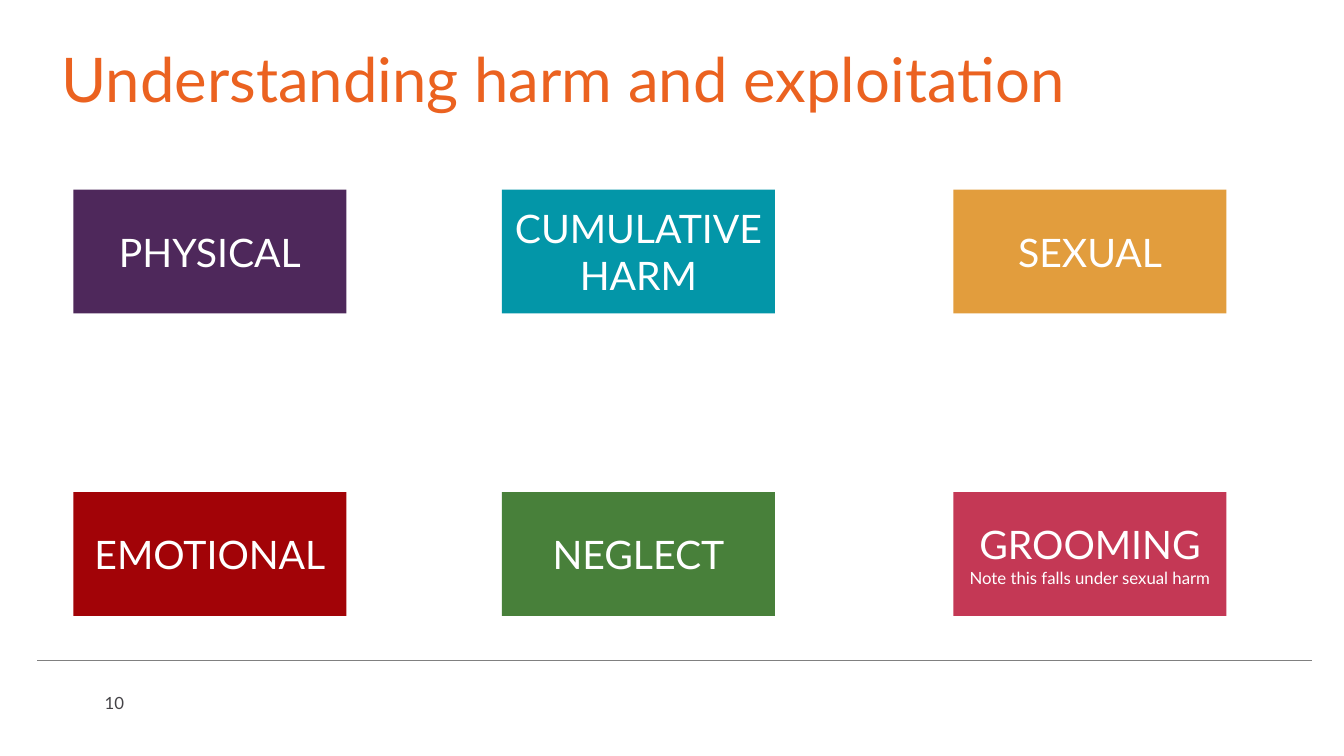
from pptx import Presentation
from pptx.dml.color import RGBColor
from pptx.enum.shapes import MSO_CONNECTOR as Connector, MSO_SHAPE as Shape
from pptx.enum.text import MSO_ANCHOR as Anchor, PP_ALIGN as Align
from pptx.oxml.ns import qn
from pptx.util import Cm, Pt

FONT = "Lato"
COLUMNS = (1.85, 12.65, 24.03)
ROWS = (4.78, 12.4)
HARMS = (
    (
        ("4E285B", [("PHYSICAL", 28)]),
        ("0396A8", [("CUMULATIVE", 28), ("HARM", 28)]),
        ("E29D3D", [("SEXUAL", 28)]),
    ),
    (
        ("A20307", [("EMOTIONAL", 28)]),
        ("48803A", [("NEGLECT", 28)]),
        ("C43855", [("GROOMING", 28), ("Note this falls under sexual harm", 12)]),
    ),
)


def color(value):
    """Turn a hex string into a colour."""
    return RGBColor.from_string(value)


def write(para, text, size, ink):
    """Fill a paragraph with text in the slide font."""
    para.text = text
    para.font.name = FONT
    para.font.size = Pt(size)
    para.font.color.rgb = color(ink)


def add_text(page, left, top, width, height, text, size, ink):
    """Add a one-paragraph text box and return its frame."""
    box = page.shapes.add_textbox(Cm(left), Cm(top), Cm(width), Cm(height))
    frame = box.text_frame
    frame.word_wrap = True
    write(frame.paragraphs[0], text, size, ink)
    return frame


def add_title(page, text):
    """Add the slide heading."""
    frame = add_text(page, 1.3, 1.12, 29.06, 2.01, text, 44, "EB6220")
    frame.vertical_anchor = Anchor.MIDDLE
    para = frame.paragraphs[0]
    para.line_spacing = Pt(43.7)
    para.space_after = Pt(14.6)


def add_harm(page, left, top, fill, lines):
    """Add a filled rectangle naming one kind of harm."""
    box = page.shapes.add_shape(Shape.RECTANGLE, Cm(left), Cm(top), Cm(6.88), Cm(3.12))
    box.shadow.inherit = False
    box.fill.solid()
    box.fill.fore_color.rgb = color(fill)
    box.line.fill.background()
    frame = box.text_frame
    frame.word_wrap = True
    frame.vertical_anchor = Anchor.MIDDLE
    for index, (text, size) in enumerate(lines):
        para = frame.add_paragraph() if index else frame.paragraphs[0]
        write(para, text, size, "FFFFFF")
        para.alignment = Align.CENTER


def add_rule(page, left, right, top):
    """Add the thin grey line above the footer."""
    rule = page.shapes.add_connector(
        Connector.STRAIGHT, Cm(left), Cm(top), Cm(right), Cm(top)
    )
    rule.line.color.rgb = color("808080")
    rule.line.width = Pt(1)
    properties = rule._element.spPr
    properties.append(properties.makeelement(qn("a:effectLst"), {}))


def main():
    """Build and save the slide."""
    deck = Presentation()
    deck.slide_width, deck.slide_height = Cm(33.87), Cm(19.05)
    page = deck.slides.add_slide(deck.slide_layouts[6])
    add_rule(page, 0.94, 33.07, 16.64)
    add_text(page, 2.39, 17.32, 1.4, 0.76, "10", 12, "454347")
    add_title(page, "Understanding harm and exploitation")
    for top, harms in zip(ROWS, HARMS):
        for left, (fill, lines) in zip(COLUMNS, harms):
            add_harm(page, left, top, fill, lines)
    deck.save("out.pptx")


if __name__ == "__main__":
    main()
